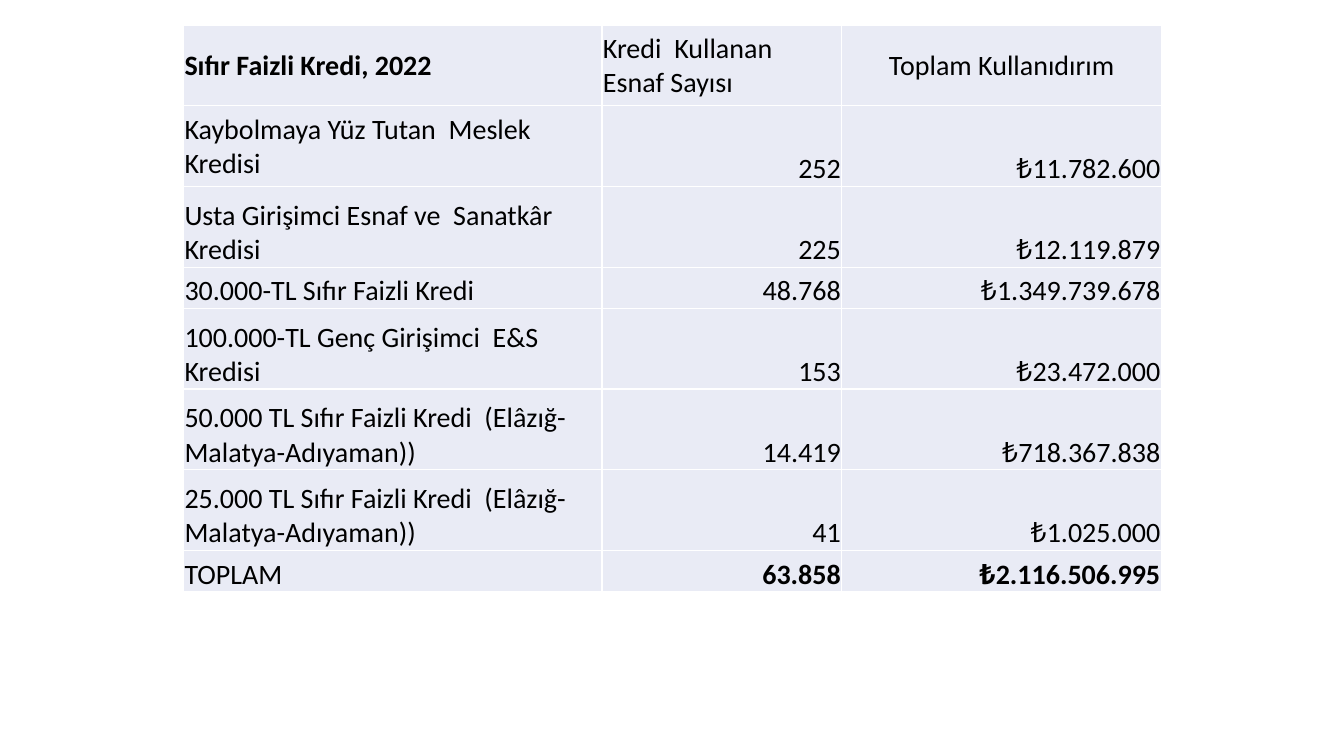
import pptx
import pptx.dml.color
import pptx.enum.text
import pptx.oxml
import pptx.oxml.ns
import pptx.util

Inches = pptx.util.Inches
Pt = pptx.util.Pt
ALIGN = pptx.enum.text.PP_ALIGN
ANCHOR = pptx.enum.text.MSO_ANCHOR

ROWS = [
    ("Sıfır Faizli Kredi, 2022", "Kredi  Kullanan  Esnaf Sayısı", "Toplam Kullanıdırım"),
    ("Kaybolmaya Yüz Tutan  Meslek Kredisi", "252", "₺11.782.600"),
    ("Usta Girişimci Esnaf ve  Sanatkâr Kredisi", "225", "₺12.119.879"),
    ("30.000-TL Sıfır Faizli Kredi", "48.768", "₺1.349.739.678"),
    ("100.000-TL Genç Girişimci  E&S Kredisi", "153", "₺23.472.000"),
    ("50.000 TL Sıfır Faizli Kredi  (Elâzığ-Malatya-Adıyaman))", "14.419", "₺718.367.838"),
    ("25.000 TL Sıfır Faizli Kredi  (Elâzığ-Malatya-Adıyaman))", "41", "₺1.025.000"),
    ("TOPLAM", "63.858", "₺2.116.506.995"),
]
COL_WIDTHS = (4.15, 2.38, 3.17)
TALL, SHORT = 0.8, 0.41
SHORT_ROWS = (3, 7)
HEADER_ALIGN = (ALIGN.LEFT, ALIGN.LEFT, ALIGN.CENTER)
BODY_ALIGN = (ALIGN.LEFT, ALIGN.RIGHT, ALIGN.RIGHT)
BOLD_CELLS = {(0, 0), (7, 1), (7, 2)}
MIDDLE_CELLS = {(0, 0), (0, 1), (0, 2), (1, 0)}


def rgb(value):
    return pptx.dml.color.RGBColor.from_string(value)


def add_borders(cell, color, width):
    """Draw the four edges; they must precede the fill in the cell properties."""
    tcPr = cell._tc.get_or_add_tcPr()
    for i, edge in enumerate(("lnL", "lnR", "lnT", "lnB")):
        tcPr.insert(i, pptx.oxml.parse_xml(
            f'<a:{edge} {pptx.oxml.ns.nsdecls("a")} w="{Pt(width)}">'
            f'<a:solidFill><a:srgbClr val="{color}"/></a:solidFill></a:{edge}>'))


def format_cell(cell, text, row, col):
    cell.margin_left = cell.margin_right = cell.margin_top = Inches(0.01)
    cell.margin_bottom = 0
    cell.vertical_anchor = ANCHOR.MIDDLE if (row, col) in MIDDLE_CELLS else ANCHOR.BOTTOM
    cell.fill.solid()
    cell.fill.fore_color.rgb = rgb("E9EBF5")
    add_borders(cell, "FFFFFF", 1)
    p = cell.text_frame.paragraphs[0]
    p.alignment = (BODY_ALIGN if row else HEADER_ALIGN)[col]
    r = p.add_run()
    r.text = text
    r.font.name = "Calibri"
    r.font.size = Pt(20)
    r.font.bold = (row, col) in BOLD_CELLS
    r.font.color.rgb = rgb("000000")


def main():
    prs = pptx.Presentation()
    prs.slide_width, prs.slide_height = Inches(13.33), Inches(7.5)
    s = prs.slides.add_slide(prs.slide_layouts[6])
    heights = [SHORT if i in SHORT_ROWS else TALL for i in range(len(ROWS))]
    table = s.shapes.add_table(
        len(ROWS), len(COL_WIDTHS), Inches(1.82), Inches(0.25),
        Inches(sum(COL_WIDTHS)), Inches(sum(heights))).table
    for column, width in zip(table.columns, COL_WIDTHS):
        column.width = Inches(width)
    for i, (values, height) in enumerate(zip(ROWS, heights)):
        table.rows[i].height = Inches(height)
        for j, text in enumerate(values):
            format_cell(table.cell(i, j), text, i, j)
    prs.save("out.pptx")


if __name__ == "__main__":
    main()
